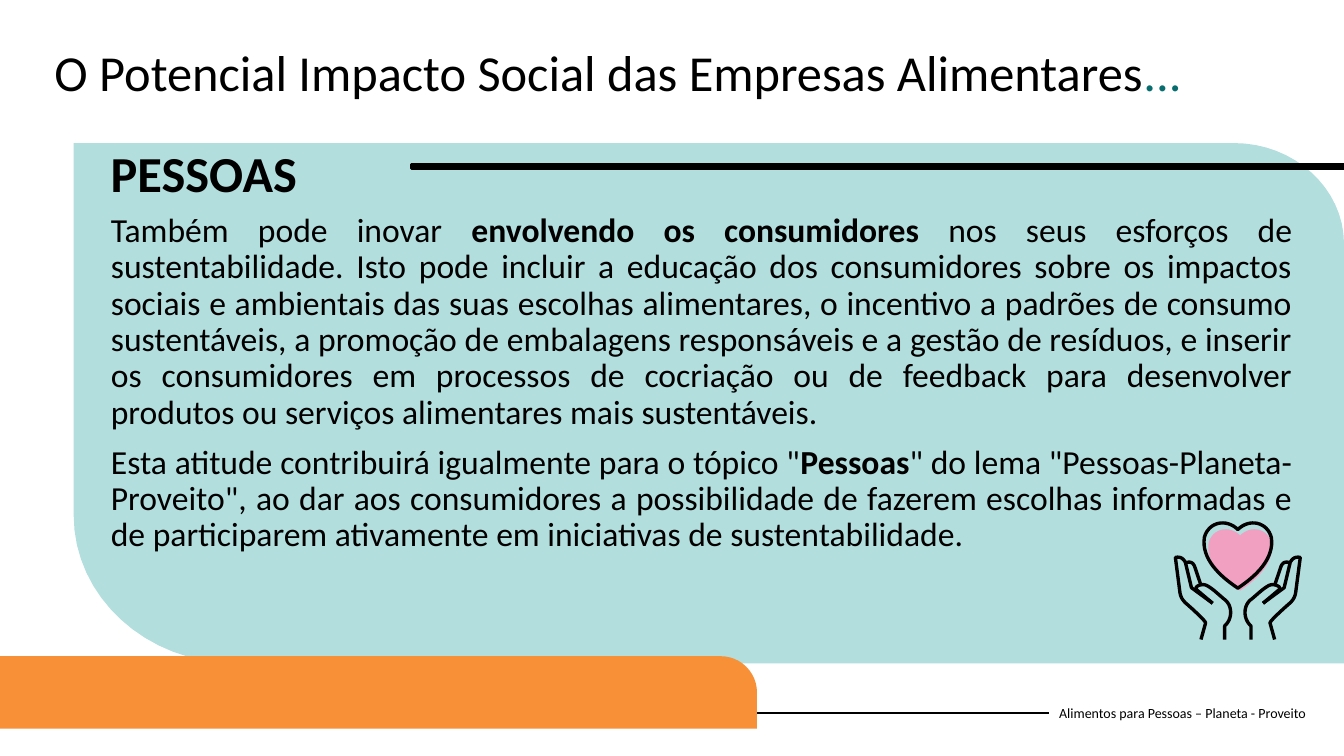
"""Build the slide on people and the social impact of food businesses."""
from dataclasses import dataclass

from lxml.etree import SubElement
from pptx import Presentation
from pptx.dml.color import RGBColor
from pptx.enum.shapes import MSO_CONNECTOR, MSO_SHAPE
from pptx.enum.text import MSO_ANCHOR, MSO_AUTO_SIZE, PP_ALIGN
from pptx.oxml.ns import qn
from pptx.util import Pt

FONT = "Calibri"
BLACK, TEAL, MINT, ORANGE, PINK = "000000", "086D6E", "B2DEDD", "F79037", "F1A0C2"
CURVE_STEPS = 16
ICON_AXIS = 884.2
ICON_LINE = 2.4

Point = tuple[float, float]


@dataclass(frozen=True)
class Outline:
    start: Point
    segments: tuple[tuple[Point, ...], ...]

    def points(self) -> list[Point]:
        traced = [self.start]
        for segment in self.segments:
            if len(segment) == 1:
                traced.append(segment[0])
                continue
            corners = (traced[-1], *segment)
            for step in range(1, CURVE_STEPS + 1):
                t = step / CURVE_STEPS
                weights = ((1 - t) ** 3, 3 * t * (1 - t) ** 2, 3 * t * t * (1 - t), t ** 3)
                traced.append((
                    sum(weight * x for weight, (x, _) in zip(weights, corners)),
                    sum(weight * y for weight, (_, y) in zip(weights, corners)),
                ))
        return traced


@dataclass(frozen=True)
class Span:
    text: str
    bold: bool = False
    color: str = BLACK


@dataclass(frozen=True)
class Box:
    left: float
    top: float
    width: float
    height: float

    def lengths(self) -> tuple[Pt, Pt, Pt, Pt]:
        return Pt(self.left), Pt(self.top), Pt(self.width), Pt(self.height)


PANEL = Outline((52.6, 102.2), (
    ((881.3, 102.2),),
    ((924.5, 102.2), (960, 134.6), (960, 174.2)),
    ((960, 473.8),),
    ((168.5, 473.8),),
    ((104.4, 473.8), (52.6, 426.2), (52.6, 367.9)),
))
HALF_HEART = Outline((0, 378.2), (
    ((8.5, 370), (21, 373), (23.9, 383.8)),
    ((26.3, 399), (13, 411.5), (0, 420.1)),
))
HAND = (
    Outline((9.4, 456.8), (
        ((9.4, 447.1),),
        ((3.6, 442.1), (3.6, 432), (10.1, 427.7)),
        ((14.4, 424.1), (21, 417.6), (24.5, 417.6)),
        ((27.4, 417.6), (31, 419), (29.5, 421.2)),
        ((18, 430.9),),
    )),
    Outline((26.3, 456.8), (
        ((23, 445),),
        ((23, 443.5), (31.7, 435.6), (37.4, 430.6)),
        ((39.6, 428.4), (41, 426.2), (41.4, 422.6)),
        ((44.6, 398.2),),
        ((41, 397.4), (38.9, 398.9), (37.4, 401.8)),
        ((33.1, 419.8),),
        ((18, 430.9),),
    )),
    Outline((26.6, 417.2), (
        ((30.6, 405.4),),
        ((31.7, 401.8), (33.8, 401), (36.7, 401.8)),
    )),
)
TITLE = [[Span("O Potencial Impacto Social das Empresas Alimentares"), Span("...", color=TEAL)]]
BODY = [
    [
        Span("Também pode inovar "),
        Span("envolvendo os consumidores ", bold=True),
        Span("nos seus esforços de sustentabilidade. Isto pode incluir a educação dos "
             "consumidores sobre os impactos sociais e ambientais das suas escolhas "
             "alimentares, o incentivo a padrões de consumo sustentáveis, a promoção de "
             "embalagens responsáveis e a gestão de resíduos, e inserir os consumidores em "
             "processos de cocriação ou de feedback para desenvolver produtos ou serviços "
             "alimentares mais sustentáveis. "),
    ],
    [
        Span('Esta atitude contribuirá igualmente para o tópico "'),
        Span("Pessoas", bold=True),
        Span('" do lema "Pessoas-Planeta-Proveito", ao dar aos consumidores a possibilidade '
             "de fazerem escolhas informadas e de participarem ativamente em iniciativas de "
             "sustentabilidade."),
    ],
]


def rgb(color: str) -> RGBColor:
    return RGBColor.from_string(color)


def paint(shape, fill: str | None = None, line: str | None = None, width: float = 0) -> None:
    shape.shadow.inherit = False
    if fill:
        shape.fill.solid()
        shape.fill.fore_color.rgb = rgb(fill)
    else:
        shape.fill.background()
    if line:
        shape.line.color.rgb = rgb(line)
        shape.line.width = Pt(width)
    else:
        shape.line.fill.background()


def draw_outline(slide, points: list[Point], closed: bool):
    corners = [(Pt(x), Pt(y)) for x, y in points]
    builder = slide.shapes.build_freeform(*corners[0], scale=1.0)
    builder.add_line_segments(corners[1:], close=closed)
    return builder.convert_to_shape()


def write(shape, paragraphs: list[list[Span]], size: float, anchor=MSO_ANCHOR.TOP,
          alignment=PP_ALIGN.LEFT) -> None:
    text_frame = shape.text_frame
    text_frame.word_wrap = True
    text_frame.auto_size = MSO_AUTO_SIZE.NONE
    text_frame.vertical_anchor = anchor
    for index, spans in enumerate(paragraphs):
        paragraph = text_frame.add_paragraph() if index else text_frame.paragraphs[0]
        paragraph.text = spans[0].text
        paragraph.alignment = alignment
        for span in spans[1:]:
            paragraph.add_run().text = span.text
        for run, span in zip(paragraph.runs, spans):
            run.font.name = FONT
            run.font.size = Pt(size)
            run.font.bold = span.bold
            run.font.color.rgb = rgb(span.color)


def place(placeholder, box: Box) -> None:
    placeholder.left, placeholder.top, placeholder.width, placeholder.height = box.lengths()
    element = placeholder.element
    element.getparent().append(element)
    for paragraph in placeholder.text_frame.paragraphs:
        paragraph.line_spacing = 0.9
        paragraph.space_before = Pt(10)
        properties = paragraph._p.get_or_add_pPr()
        properties.set("marL", "0")
        properties.set("indent", "0")
        SubElement(properties, qn("a:buNone"))


def draw_background(slide) -> None:
    footer = slide.shapes.add_textbox(*Box(749.5, 494.6, 196.6, 28.8).lengths())
    write(footer, [[Span("Alimentos para Pessoas – Planeta - Proveito")]], 10, MSO_ANCHOR.MIDDLE)
    rule = slide.shapes.add_connector(MSO_CONNECTOR.STRAIGHT, 0, Pt(509), Pt(749.5), Pt(509))
    rule.end_connect(footer, 1)
    rule.line.color.rgb = rgb(BLACK)
    rule.line.width = Pt(1.5)
    SubElement(rule._element.spPr, qn("a:effectLst"))
    paint(draw_outline(slide, PANEL.points(), True), MINT)
    tab = slide.shapes.add_shape(MSO_SHAPE.ROUND_1_RECTANGLE, *Box(0, 468.7, 540.7, 51.8).lengths())
    tab.adjustments[0] = 0.5
    paint(tab, ORANGE)
    bar = slide.shapes.add_shape(MSO_SHAPE.RECTANGLE, *Box(293.8, 117.4, 666.2, 2.9).lengths())
    paint(bar, BLACK, BLACK, 1.93)


def draw_icon(slide) -> None:
    half = HALF_HEART.points()
    heart = half + [(-x, y) for x, y in reversed(half[1:-1])]
    tip = half[-1][1]
    filling = [(ICON_AXIS + 1.6 + x * 0.94, tip + 1.7 + (y - tip) * 0.94) for x, y in heart]
    paint(draw_outline(slide, filling, True), PINK)
    for side in (1, -1):
        for stroke in HAND:
            points = [(ICON_AXIS + side * x, y) for x, y in stroke.points()]
            paint(draw_outline(slide, points, False), line=BLACK, width=ICON_LINE)
    rim = [(ICON_AXIS + x, y) for x, y in heart]
    paint(draw_outline(slide, rim, True), line=BLACK, width=ICON_LINE)


def main() -> None:
    presentation = Presentation()
    presentation.slide_width, presentation.slide_height = Pt(960), Pt(540)
    slide = presentation.slides.add_slide(presentation.slide_layouts[1])
    draw_background(slide)
    title, body = slide.shapes.title, slide.placeholders[1]
    write(body, BODY, 24, alignment=PP_ALIGN.JUSTIFY)
    place(body, Box(72, 149, 858.2, 270.7))
    write(title, TITLE, 36)
    place(title, Box(31.7, 31, 946.8, 63.4))
    draw_icon(slide)
    heading = slide.shapes.add_textbox(*Box(72, 97.9, 192.2, 51.1).lengths())
    write(heading, [[Span("PESSOAS", bold=True)]], 36)
    presentation.save("out.pptx")


if __name__ == "__main__":
    main()
